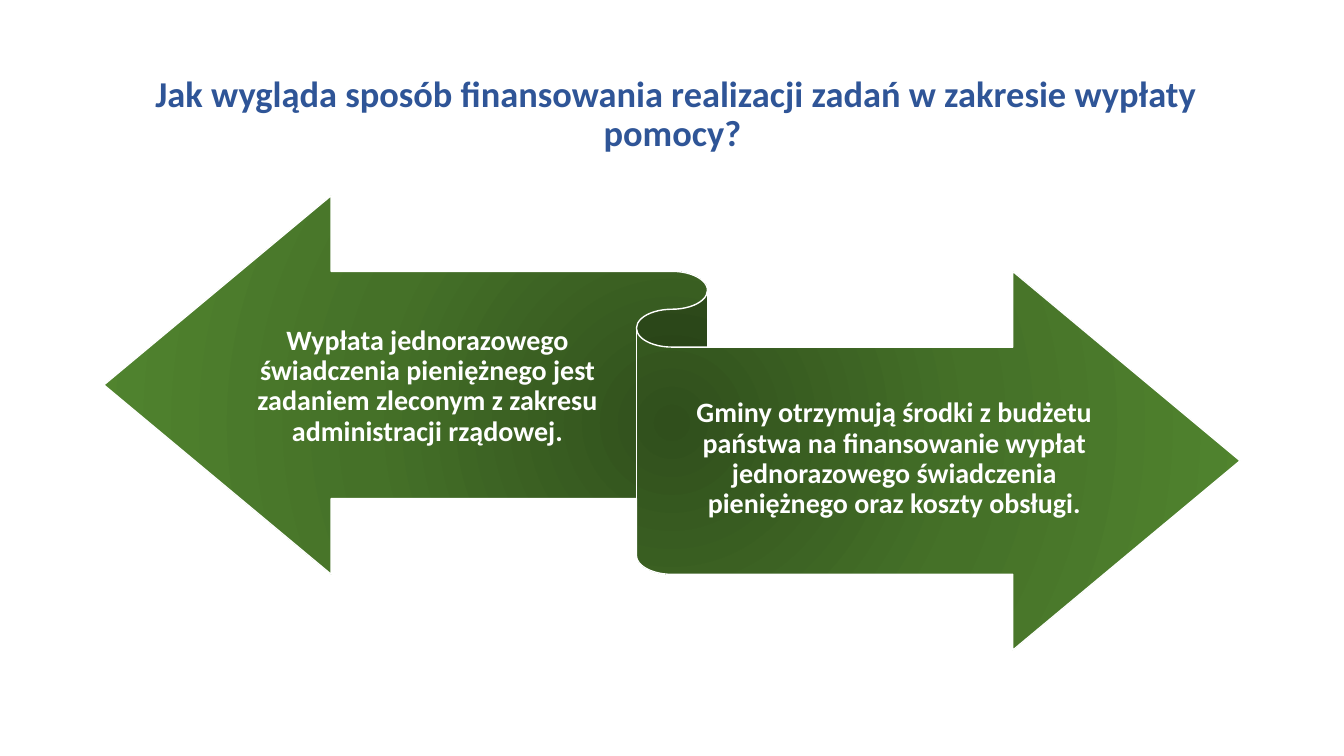
from pptx import Presentation
from pptx.dml.color import RGBColor
from pptx.enum.shapes import MSO_SHAPE
from pptx.enum.text import MSO_ANCHOR, PP_ALIGN
from pptx.oxml import parse_xml
from pptx.oxml.ns import nsdecls
from pptx.util import Emu, Pt

PX = 9144  # 100 px to the inch


def px(length):
    return Emu(length * PX)


def color(value):
    return RGBColor.from_string(value)


class Slide:
    font = "Calibri"
    blue = "2F5597"
    white = "FFFFFF"
    greens = [(0, "304F1C"), (50, "457128"), (100, "52862F")]

    def __init__(self, page):
        self.page = page

    def text(self, left, top, width, height, words, size, ink, side_inset):
        box = self.page.shapes.add_textbox(px(left), px(top), px(width), px(height))
        frame = box.text_frame
        frame.word_wrap = True
        frame.vertical_anchor = MSO_ANCHOR.MIDDLE
        frame.margin_left = frame.margin_right = px(side_inset)
        frame.text = words
        para = frame.paragraphs[0]
        para.alignment = PP_ALIGN.CENTER
        para.line_spacing = 0.9
        for span in para.runs:
            span.font.name = self.font
            span.font.size = Pt(size)
            span.font.bold = True
            span.font.color.rgb = color(ink)

    def ribbon(self, left, top, width, height):
        shape = self.page.shapes.add_shape(
            MSO_SHAPE.LEFT_RIGHT_RIBBON, px(left), px(top), px(width), px(height))
        # Radial gradient, darkest in the middle
        stops = "".join(
            f'<a:gs pos="{percent * 1000}"><a:srgbClr val="{green}"/></a:gs>'
            for percent, green in self.greens)
        shape.element.spPr.append(parse_xml(
            f'<a:gradFill {nsdecls("a")} rotWithShape="1"><a:gsLst>{stops}</a:gsLst>'
            '<a:path path="circle"><a:fillToRect l="50000" t="50000" r="50000" b="50000"/>'
            '</a:path></a:gradFill>'))
        shape.line.color.rgb = color(self.white)
        shape.line.width = Pt(1)
        shape.shadow.inherit = False


def main():
    deck = Presentation()
    deck.slide_width, deck.slide_height = px(1333), px(750)
    slide = Slide(deck.slides.add_slide(deck.slide_layouts[6]))

    # Title
    slide.text(92, 59, 1150, 110,
               " Jak wygląda sposób finansowania realizacji zadań w zakresie wypłaty pomocy?",
               26, slide.blue, 10)

    # Two-way ribbon
    slide.ribbon(103, 194, 1127, 451)

    # Labels on the two arrows
    labels = [
        (238, 273, 372, "Wypłata jednorazowego świadczenia pieniężnego jest "
                        "zadaniem zleconym z zakresu administracji rządowej."),
        (667, 345, 440, "Gminy otrzymują środki z budżetu państwa na finansowanie wypłat "
                        "jednorazowego świadczenia pieniężnego oraz koszty obsługi."),
    ]
    for left, top, width, words in labels:
        slide.text(left, top, width, 221, words, 20, slide.white, 0)

    deck.save("out.pptx")


if __name__ == "__main__":
    main()
